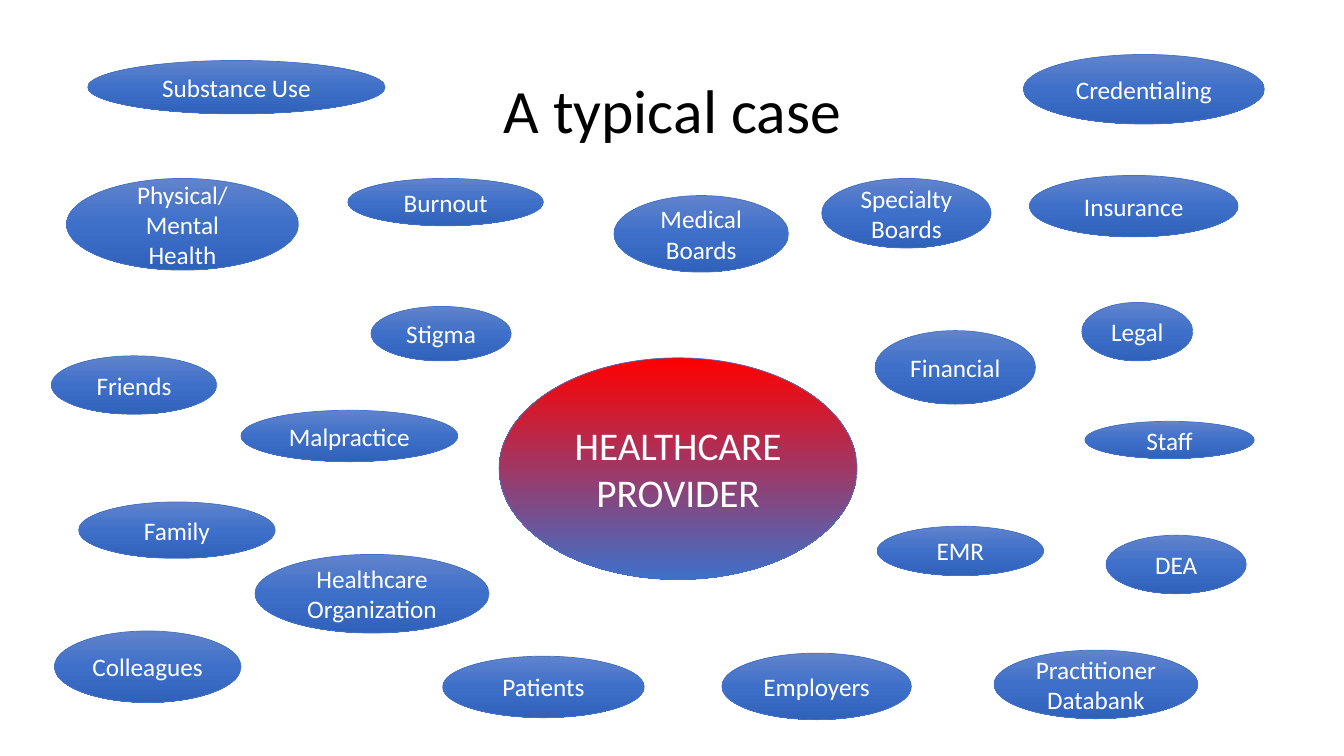
from dataclasses import dataclass
from typing import NamedTuple

from lxml.etree import SubElement
from pptx import Presentation
from pptx.dml.color import RGBColor
from pptx.enum.shapes import MSO_SHAPE
from pptx.enum.text import MSO_ANCHOR, PP_ALIGN
from pptx.oxml.ns import qn
from pptx.util import Pt

EMU_PER_PX = 9144


@dataclass(frozen=True)
class Theme:
    """Colours, font and type sizes of the slide."""
    font: str = "Calibri"
    title_size: int = 44
    provider_size: int = 28
    factor_size: int = 18
    title_color: str = "000000"
    label_color: str = "FFFFFF"
    outline: str = "4472C4"
    outline_width: float = 0.5
    provider_stops: tuple = ((0, "FF0000"), (100, "3E70CA"))
    factor_stops: tuple = ((0, "6183CB"), (50, "3E70CA"), (100, "3062BB"))


class Box(NamedTuple):
    """A rectangle in px."""
    left: int
    top: int
    width: int
    height: int

    def inner(self, left, top, width, height):
        """Return a rectangle placed relative to this one."""
        return Box(self.left + left, self.top + top, width, height)

    def emu(self):
        """Return the four lengths in EMU."""
        return [length * EMU_PER_PX for length in self]


THEME = Theme()
SLIDE_WIDTH, SLIDE_HEIGHT = 1333, 750
TITLE_BOX = Box(92, 40, 1150, 145)
PROVIDER_BOX = Box(495, 355, 355, 220)
PERSONAL_BOX = Box(50, 50, 440, 650)
PRACTICE_BOX = Box(435, 190, 470, 525)
OVERSIGHT_BOX = Box(815, 50, 440, 665)

PERSONAL_FACTORS = (
    ("Substance Use", 37, 10, 295, 53),
    ("Physical/Mental Health", 16, 127, 230, 91),
    ("Burnout", 295, 127, 194, 47),
    ("Stigma", 318, 254, 139, 54),
    ("Friends", 1, 303, 164, 58),
    ("Malpractice", 189, 357, 215, 51),
    ("Family", 28, 448, 195, 56),
    ("Healthcare Organization", 203, 500, 232, 78),
    ("Colleagues", 4, 576, 185, 71),
)
PRACTICE_FACTORS = (
    ("Medical Boards", 174, 4, 173, 76),
    ("Patients", 4, 461, 200, 61),
    ("Employers", 281, 458, 188, 66),
)
OVERSIGHT_FACTORS = (
    ("Credentialing", 200, 4, 239, 69),
    ("Specialty Boards", 0, 127, 168, 69),
    ("Insurance", 206, 124, 207, 61),
    ("Legal", 258, 250, 110, 58),
    ("Financial", 53, 278, 159, 73),
    ("Staff", 261, 368, 168, 37),
    ("EMR", 55, 472, 165, 49),
    ("DEA", 282, 481, 139, 58),
    ("Practitioner Databank", 171, 595, 202, 68),
)


def write_text(shape, text, size, color):
    """Write one centred run in the middle of a shape."""
    frame = shape.text_frame
    frame.word_wrap = True
    frame.vertical_anchor = MSO_ANCHOR.MIDDLE
    paragraph = frame.paragraphs[0]
    paragraph.alignment = PP_ALIGN.CENTER
    run = paragraph.add_run()
    run.text = text
    run.font.name = THEME.font
    run.font.size = Pt(size)
    run.font.color.rgb = RGBColor.from_string(color)
    return paragraph


def fill_gradient(shape, stops):
    """Fill a shape from top to bottom with the given stops."""
    shape.fill.gradient()
    shape.fill.gradient_angle = 270
    stop_list = shape._element.spPr.find(qn("a:gradFill")).find(qn("a:gsLst"))
    stop_list.clear()
    for percent, color in stops:
        stop = SubElement(stop_list, qn("a:gs"), pos=str(percent * 1000))
        SubElement(stop, qn("a:srgbClr"), val=color)


def add_ellipse(slide, box, text, size, stops):
    """Draw a labelled ellipse that fills the box."""
    ellipse = slide.shapes.add_shape(MSO_SHAPE.OVAL, *box.emu())
    ellipse.shadow.inherit = False
    fill_gradient(ellipse, stops)
    ellipse.line.color.rgb = RGBColor.from_string(THEME.outline)
    ellipse.line.width = Pt(THEME.outline_width)
    write_text(ellipse, text, size, THEME.label_color)


def add_title(slide, box):
    """Place the slide title in the box."""
    title = slide.shapes.add_textbox(*box.emu())
    paragraph = write_text(title, "A typical case", THEME.title_size, THEME.title_color)
    paragraph.line_spacing = 0.9


def add_provider(slide, box):
    """Place the central provider ellipse in the box."""
    add_ellipse(slide, box, "HEALTHCARE PROVIDER", THEME.provider_size, THEME.provider_stops)


def add_factors(slide, box, factors):
    """Scatter the factors of one region within its box."""
    for text, *place in factors:
        add_ellipse(slide, box.inner(*place), text, THEME.factor_size, THEME.factor_stops)


def main():
    """Build and save the slide."""
    presentation = Presentation()
    presentation.slide_width = SLIDE_WIDTH * EMU_PER_PX
    presentation.slide_height = SLIDE_HEIGHT * EMU_PER_PX
    slide = presentation.slides.add_slide(presentation.slide_layouts[6])
    add_title(slide, TITLE_BOX)
    add_provider(slide, PROVIDER_BOX)
    add_factors(slide, PERSONAL_BOX, PERSONAL_FACTORS)
    add_factors(slide, PRACTICE_BOX, PRACTICE_FACTORS)
    add_factors(slide, OVERSIGHT_BOX, OVERSIGHT_FACTORS)
    presentation.save("out.pptx")


if __name__ == "__main__":
    main()
